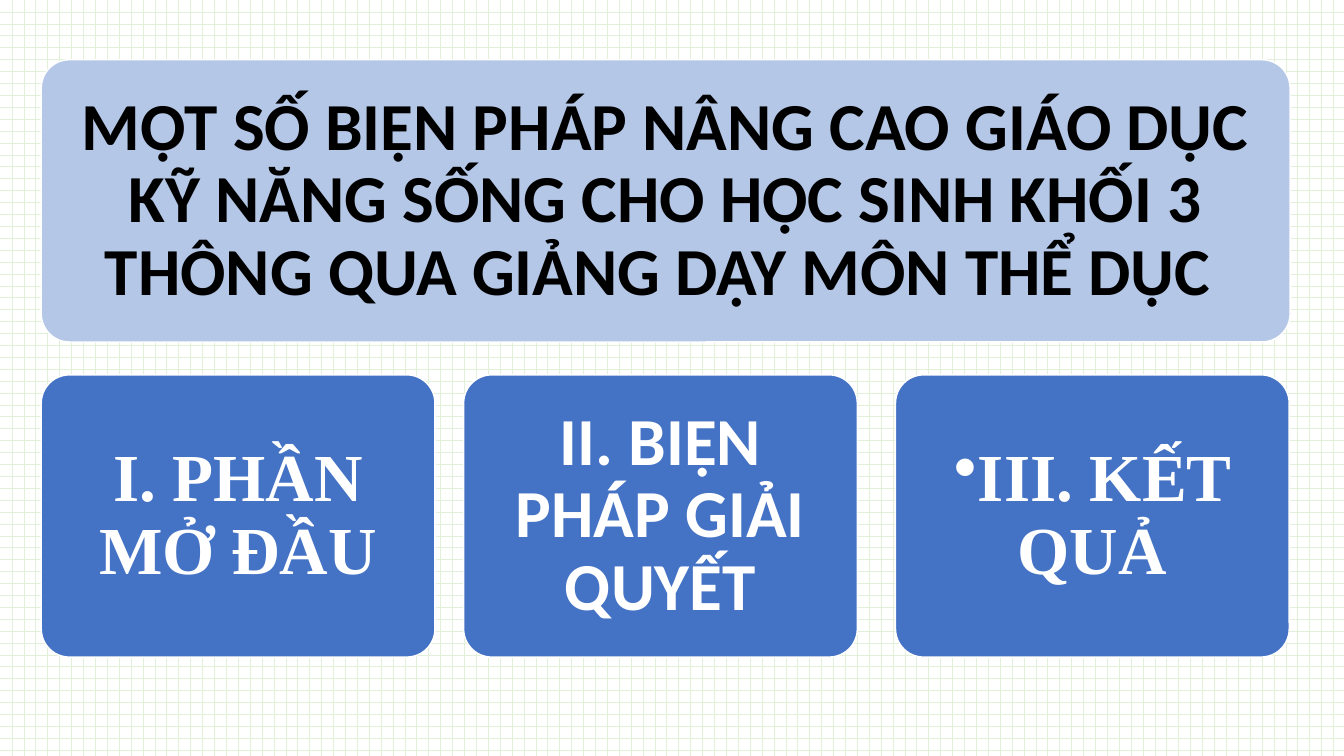
import pptx
import pptx.dml.color
import pptx.enum.dml
import pptx.enum.shapes
import pptx.enum.text
import pptx.util
from lxml import etree

Pt = pptx.util.Pt
COLORS = {
    "grid": "E2F0D9",
    "white": "FFFFFF",
    "black": "000000",
    "title": "B4C7E7",
    "section": "4472C4",
}
LEFT = 29.5
CARD_HEIGHT = 201.6
TITLE_TOP, TITLE_WIDTH = 42.7, 892
SECTION_TOP, SECTION_WIDTH = 267.8, 281.2


def color(name):
    return pptx.dml.color.RGBColor.from_string(COLORS[name])


def add_card(text, *, left, top, width, fill, font, text_color="white", bullet=None):
    shape = slide.shapes.add_shape(
        pptx.enum.shapes.MSO_SHAPE.ROUNDED_RECTANGLE,
        Pt(left), Pt(top), Pt(width), Pt(CARD_HEIGHT))
    shape.adjustments[0] = 0.1
    shape.shadow.inherit = False
    shape.fill.solid()
    shape.fill.fore_color.rgb = color(fill)
    shape.line.color.rgb = color("white")
    shape.line.width = Pt(1)

    frame = shape.text_frame
    frame.word_wrap = True
    frame.vertical_anchor = pptx.enum.text.MSO_ANCHOR.MIDDLE
    frame.margin_left = frame.margin_right = Pt(14.4)
    frame.margin_top = frame.margin_bottom = Pt(14.4)

    paragraph = frame.paragraphs[0]
    paragraph.alignment = pptx.enum.text.PP_ALIGN.CENTER
    paragraph.line_spacing = 0.9
    run = paragraph.add_run()
    run.text = text
    run.font.name = font
    run.font.size = Pt(48)
    run.font.bold = True
    run.font.color.rgb = color(text_color)
    if bullet:
        properties = paragraph._p.get_or_add_pPr()
        namespace = properties.nsmap["a"]
        etree.SubElement(properties, f"{{{namespace}}}buChar", char=bullet)


presentation = pptx.Presentation()
presentation.slide_width, presentation.slide_height = Pt(960), Pt(540)
slide = presentation.slides.add_slide(presentation.slide_layouts[6])

# Brick-patterned background
background = slide.background.fill
background.patterned()
background.pattern = pptx.enum.dml.MSO_PATTERN.HORIZONTAL_BRICK
background.fore_color.rgb = color("grid")
background.back_color.rgb = color("white")

# Title card
add_card(
    "MỘT SỐ BIỆN PHÁP NÂNG CAO GIÁO DỤC KỸ NĂNG SỐNG CHO HỌC SINH KHỐI 3 "
    "THÔNG QUA GIẢNG DẠY MÔN THỂ DỤC ",
    left=LEFT, top=TITLE_TOP, width=TITLE_WIDTH,
    fill="title", font="Calibri", text_color="black")

# Section cards
sections = [
    ("I. PHẦN MỞ ĐẦU", LEFT, "Times New Roman", None),
    ("II. BIỆN PHÁP GIẢI QUYẾT", 331.2, "Calibri", None),
    ("III. KẾT QUẢ", 639.7, "Times New Roman", "•"),
]
for text, left, font, bullet in sections:
    add_card(text, left=left, top=SECTION_TOP, width=SECTION_WIDTH,
             fill="section", font=font, bullet=bullet)

presentation.save("out.pptx")
